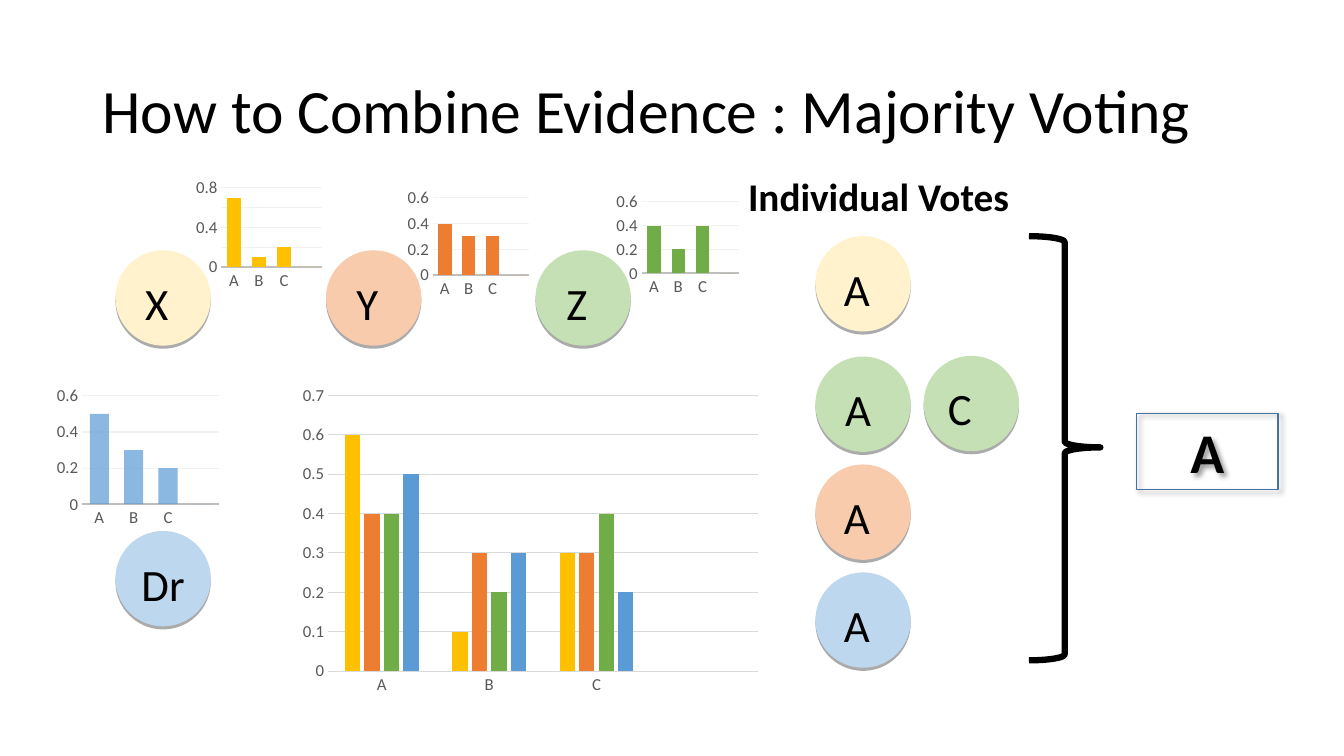
import pptx
import pptx.chart.data
import pptx.dml.color
import pptx.enum.chart
import pptx.enum.shapes
import pptx.enum.text
import pptx.oxml
import pptx.oxml.ns
import pptx.util
import lxml.etree

Pt = pptx.util.Pt
FONT = "Calibri"
YELLOW, ORANGE, GREEN, BLUE = "FFC000", "ED7D31", "70AD47", "5B9BD5"
PALE_YELLOW, PALE_ORANGE, PALE_GREEN, PALE_BLUE = "FFF2CC", "F8CBAD", "C5E0B4", "BDD7EE"
DIAMETER = 68.1


def color(hex_string):
    return pptx.dml.color.RGBColor.from_string(hex_string)


def write(shape, runs, bold=False, align=pptx.enum.text.PP_ALIGN.CENTER):
    """Fill the first paragraph with (text, size) runs in black."""
    shape.text_frame.word_wrap = True
    paragraph = shape.text_frame.paragraphs[0]
    paragraph.alignment = align
    for text, size in runs:
        run = paragraph.add_run()
        run.text = text
        run.font.name = FONT
        run.font.size = Pt(size)
        run.font.bold = bold
        run.font.color.rgb = color("000000")


presentation = pptx.Presentation()
presentation.slide_width = Pt(960)
presentation.slide_height = Pt(540)
slide = presentation.slides.add_slide(presentation.slide_layouts[5])
shapes = slide.shapes
LEFT = pptx.enum.text.PP_ALIGN.LEFT
MIDDLE = pptx.enum.text.MSO_ANCHOR.MIDDLE
SHAPE = pptx.enum.shapes.MSO_SHAPE

title = shapes.title
title.left, title.top, title.width, title.height = Pt(66), Pt(28.75), Pt(828), Pt(104.4)
title.text_frame.vertical_anchor = MIDDLE
write(title, [("How to Combine Evidence : Majority Voting", 44)], align=LEFT)
title.text_frame.paragraphs[0].line_spacing = 0.9

# Sources and their votes: text, left, top, fill
circles = [
    ("X", 82.5, 178.8, PALE_YELLOW),
    ("Y", 232.9, 178.8, PALE_ORANGE),
    ("Z", 382.5, 178.8, PALE_GREEN),
    ("Dr", 82.5, 379.3, PALE_BLUE),
    ("A", 582.5, 168.7, PALE_YELLOW),
    ("A ", 582.5, 254.7, PALE_GREEN),
    ("C ", 659.8, 254.2, PALE_GREEN),
    ("A", 582.5, 331.8, PALE_ORANGE),
    ("A", 582.5, 408.9, PALE_BLUE),
]
shadowed = []  # shape, opacity %, blur, distance, angle
for text, left, top, fill in circles:
    circle = shapes.add_shape(SHAPE.OVAL, Pt(left), Pt(top), Pt(DIAMETER), Pt(DIAMETER))
    circle.fill.solid()
    circle.fill.fore_color.rgb = color(fill)
    circle.line.fill.background()
    circle.text_frame.vertical_anchor = MIDDLE
    write(circle, [(text, 32), (" ", 40)])
    shadowed.append((circle, 32, 0, 2.2, 90))

heading = shapes.add_textbox(Pt(527.3), Pt(119.5), Pt(208), Pt(41.2))
write(heading, [("Individual Votes", 28)], bold=True, align=LEFT)

brace = shapes.add_shape(SHAPE.RIGHT_BRACE, Pt(735), Pt(168.7), Pt(51), Pt(303))
brace.adjustments[0] = 0.083
brace.adjustments[1] = 0.498
brace.shadow.inherit = False
brace.fill.background()
brace.line.color.rgb = color("000000")
brace.line.width = Pt(4.5)

result = shapes.add_shape(SHAPE.RECTANGLE, Pt(812), Pt(295.2), Pt(100.8), Pt(54.7))
result.fill.background()
result.line.color.rgb = color("43739E")
result.line.width = Pt(1)
result.text_frame.vertical_anchor = MIDDLE
write(result, [("A", 40)], bold=True)
shadowed.append((result, 40, 4, 3, 45))

for shape, opacity, blur, distance, angle in shadowed:
    shape.shadow.inherit = False
    effects = shape._element.spPr.find(pptx.oxml.ns.qn("a:effectLst"))
    effects.append(pptx.oxml.parse_xml(
        f'<a:outerShdw {pptx.oxml.ns.nsdecls("a")} blurRad="{Pt(blur)}" dist="{Pt(distance)}" '
        f'dir="{angle * 60000}" algn="t" rotWithShape="0">'
        f'<a:srgbClr val="000000"><a:alpha val="{opacity * 1000}"/></a:srgbClr></a:outerShdw>'))

# Frame, axis maximum, axis step, then (color, values) per series
charts = [
    ((438.5, 135.4, 91.4, 78.5), 0.6, 0.2, [(GREEN, (0.4, 0.2, 0.4, 0))]),
    ((138.2, 125.3, 93.6, 84.2), 0.8, 0.2, [(YELLOW, (0.7, 0.1, 0.2, 0))]),
    ((289.4, 132.5, 90, 82.8), 0.6, 0.2, [(ORANGE, (0.4, 0.3, 0.3, 0))]),
    ((38.2, 273.6, 121, 105.8), 0.6, 0.2, [(BLUE, (0.5, 0.3, 0.2, 0))]),
    ((209.5, 270.7, 338.4, 230.4), 0.7, 0.1, [
        (YELLOW, (0.6, 0.1, 0.3, None)),
        (ORANGE, (0.4, 0.3, 0.3, None)),
        (GREEN, (0.4, 0.2, 0.4, None)),
        (BLUE, (0.5, 0.3, 0.2, None)),
    ]),
]
for frame, maximum, step, series_list in charts:
    combined = len(series_list) > 1
    data = pptx.chart.data.CategoryChartData()
    data.categories = ["A", "B", "C", ""]
    for number, (_, values) in enumerate(series_list, 1):
        data.add_series(f"Series {number}", values)
    chart = shapes.add_chart(
        pptx.enum.chart.XL_CHART_TYPE.COLUMN_CLUSTERED, *map(Pt, frame), data).chart
    chart.has_legend = False
    chart.has_title = False
    chart.font.name = FONT
    chart.font.size = Pt(12)
    chart.font.color.rgb = color("595959")

    plot = chart.plots[0]
    plot.vary_by_categories = False
    plot.gap_width = 219 if combined else 80
    plot.overlap = -27 if combined else 25
    for series, (fill, _) in zip(plot.series, series_list):
        series.format.fill.solid()
        series.format.fill.fore_color.rgb = color(fill)
        series.invert_if_negative = False
        if fill == BLUE and not combined:
            rgb = series.format.fill._xPr.find(".//" + pptx.oxml.ns.qn("a:srgbClr"))
            lxml.etree.SubElement(rgb, pptx.oxml.ns.qn("a:alpha"), val="70000")

    for axis in (chart.category_axis, chart.value_axis):
        axis.major_tick_mark = pptx.enum.chart.XL_TICK_MARK.NONE
        axis.minor_tick_mark = pptx.enum.chart.XL_TICK_MARK.NONE
    category_line = chart.category_axis.format.line
    category_line.color.rgb = color("D9D9D9" if combined else "BFBFBF")
    category_line.width = Pt(0.75 if combined else 1.25)
    value_axis = chart.value_axis
    value_axis.minimum_scale = 0
    value_axis.maximum_scale = maximum
    value_axis.major_unit = step
    value_axis.format.line.fill.background()
    value_axis.tick_labels.number_format = "General"
    value_axis.tick_labels.number_format_is_linked = False
    grid_line = value_axis.major_gridlines.format.line
    grid_line.color.rgb = color("D9D9D9" if combined else "F2F2F2")
    grid_line.width = Pt(0.75)

presentation.save("out.pptx")
